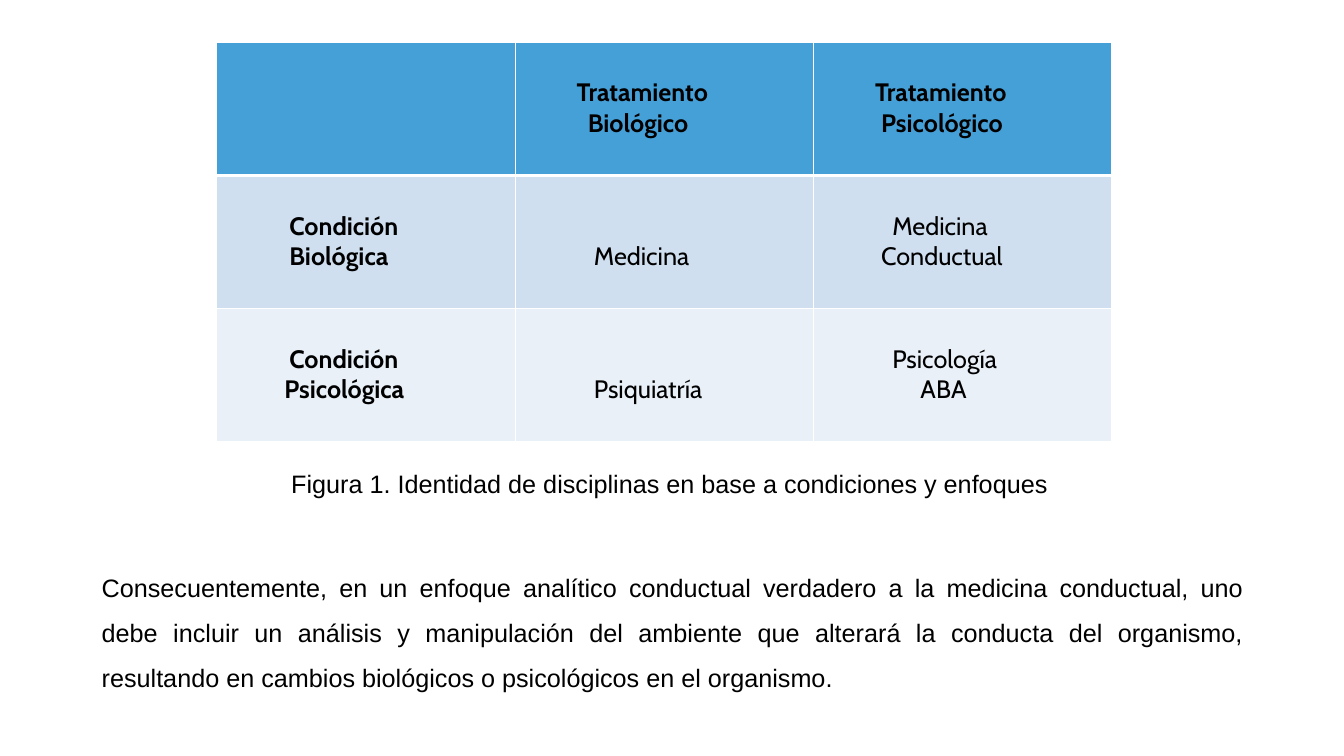
from lxml.etree import SubElement
from pptx import Presentation
from pptx.dml.color import RGBColor
from pptx.enum.text import MSO_AUTO_SIZE as AutoSize, MSO_ANCHOR as Anchor, PP_ALIGN as Align
from pptx.oxml.ns import qn
from pptx.util import Inches, Pt

BLACK = RGBColor(0x00, 0x00, 0x00)
WHITE = RGBColor(0xFF, 0xFF, 0xFF)
HEADER_BLUE = RGBColor(0x46, 0xA0, 0xD8)
BIOLOGICAL_BLUE = RGBColor(0xCF, 0xDF, 0xF0)
PSYCHOLOGICAL_BLUE = RGBColor(0xE9, 0xF0, 0xF8)

ROW_FILLS = [HEADER_BLUE, BIOLOGICAL_BLUE, PSYCHOLOGICAL_BLUE]
DISCIPLINES = [
    [[],
     [("Tratamiento", 0.51), ("Biológico", 0.62)],
     [("Tratamiento", 0.51), ("Psicológico", 0.57)]],
    [[("Condición", 0.62), ("Biológica", 0.62)],
     [("Medicina", 0.68)],
     [("Medicina", 0.68), ("Conductual", 0.57)]],
    [[("Condición", 0.62), ("Psicológica", 0.57)],
     [("Psiquiatría", 0.68)],
     [("Psicología", 0.68), ("ABA", 0.96)]],
]
CAPTION = "Figura 1. Identidad de disciplinas en base a condiciones y enfoques"
CONCLUSION = (
    "Consecuentemente, en un enfoque analítico conductual verdadero a la medicina "
    "conductual, uno debe incluir un análisis y manipulación del ambiente que alterará "
    "la conducta del organismo, resultando en cambios biológicos o psicológicos en el "
    "organismo."
)


class SlideBuilder:
    table_font = "Cabin"
    body_font = "Arial"
    size = Pt(18)
    line_height = 0.3
    cell_margin = 0.05

    def __init__(self, slide):
        self.slide = slide

    def style(self, paragraph, font_name, bold=False, indent=0):
        paragraph._p.get_or_add_pPr().set("marL", str(Inches(indent)))
        for run in paragraph.runs:
            run.font.name = font_name
            run.font.size = self.size
            run.font.bold = bold
            run.font.color.rgb = BLACK

    def borders(self, cell, bottom_width):
        properties = cell._tc.get_or_add_tcPr()
        for side, width in (("L", 1), ("R", 1), ("T", 1), ("B", bottom_width)):
            line = SubElement(properties, qn(f"a:ln{side}"), w=str(Pt(width)))
            fill = SubElement(line, qn("a:solidFill"))
            SubElement(fill, qn("a:srgbClr"), val=str(WHITE))

    def cell(self, cell, lines, fill, bold, bottom_width):
        self.borders(cell, bottom_width)
        cell.fill.solid()
        cell.fill.fore_color.rgb = fill
        cell.vertical_anchor = Anchor.TOP
        lines_above = 3 - len(lines) if lines else 0
        cell.margin_top = Inches(self.cell_margin + lines_above * self.line_height)
        cell.text_frame.text = "\n".join(text for text, _ in lines)
        for paragraph, (_, indent) in zip(cell.text_frame.paragraphs, lines):
            self.style(paragraph, self.table_font, bold, indent)

    def table(self, rows, fills, left, top, column_width, row_height):
        column_count = len(rows[0])
        table = self.slide.shapes.add_table(
            len(rows), column_count, Inches(left), Inches(top),
            Inches(column_width * column_count), Inches(row_height * len(rows))).table
        for row_index, (row, fill) in enumerate(zip(rows, fills)):
            for column_index, lines in enumerate(row):
                is_header = row_index == 0
                self.cell(table.cell(row_index, column_index), lines, fill,
                          is_header or column_index == 0, 3 if is_header else 1)

    def commentary(self, caption, conclusion, left, top, width, height):
        frame = self.slide.shapes.add_textbox(
            Inches(left), Inches(top), Inches(width), Inches(height)).text_frame
        frame.word_wrap = True
        frame.auto_size = AutoSize.SHAPE_TO_FIT_TEXT
        frame.text = f"{caption}\n{conclusion}"
        caption_line, conclusion_text = frame.paragraphs
        self.style(caption_line, self.body_font, indent=1.88)
        self.style(conclusion_text, self.body_font)
        conclusion_text.alignment = Align.JUSTIFY
        conclusion_text.line_spacing = 1.5
        conclusion_text.space_before = Pt(41.4)


def main():
    deck = Presentation()
    deck.slide_width = Inches(13.33)
    deck.slide_height = Inches(7.5)
    builder = SlideBuilder(deck.slides.add_slide(deck.slide_layouts[6]))
    builder.table(DISCIPLINES, ROW_FILLS, 2.15, 0.42, 2.96, 1.32)
    builder.commentary(CAPTION, CONCLUSION, 0.91, 4.6, 11.52, 2.32)
    deck.save("out.pptx")


if __name__ == "__main__":
    main()
